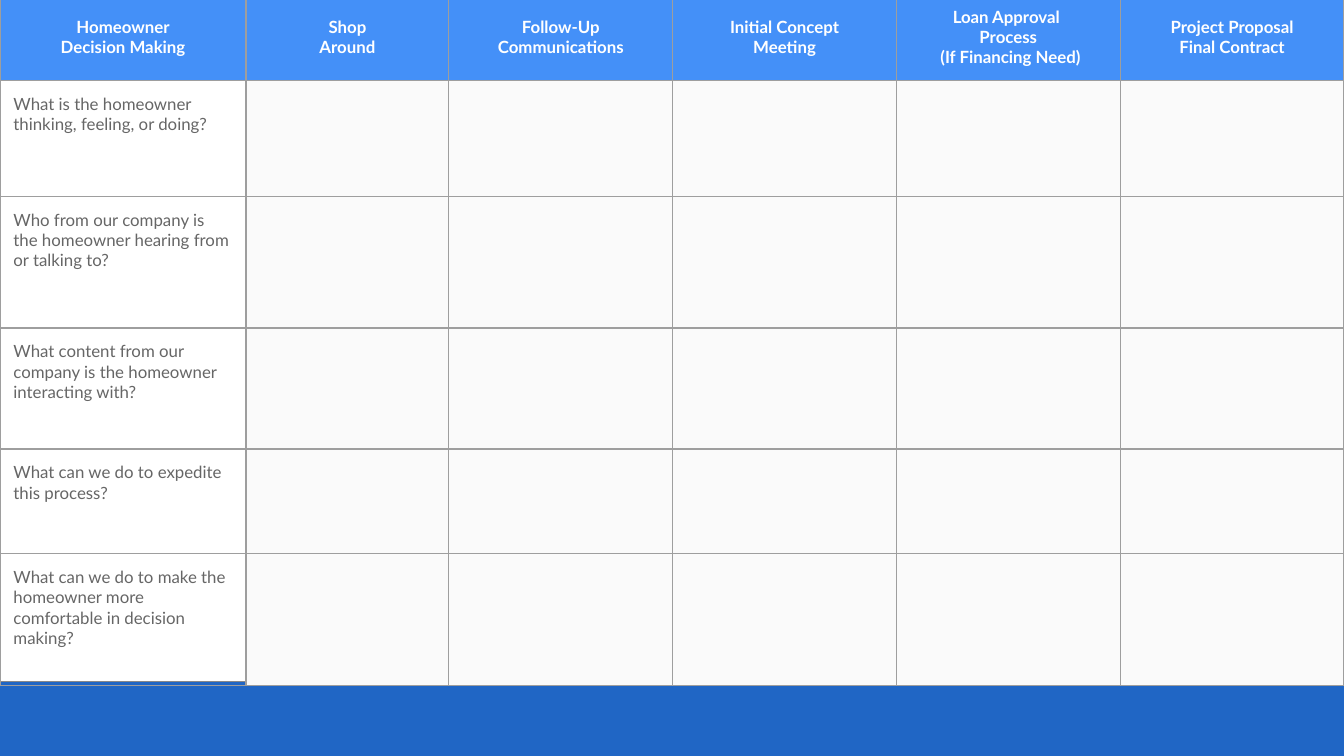
from pptx import Presentation
from pptx.dml.color import RGBColor
from pptx.enum.shapes import MSO_SHAPE as Shape
from pptx.enum.text import MSO_ANCHOR as Anchor, PP_ALIGN as Align
from pptx.oxml import parse_xml
from pptx.oxml.ns import nsdecls
from pptx.util import Inches, Pt

DEEP_BLUE = RGBColor(0x20, 0x66, 0xC5)
HEADER_BLUE = RGBColor(0x44, 0x90, 0xF8)
WHITE = RGBColor(0xFF, 0xFF, 0xFF)
PALE_GRAY = RGBColor(0xFA, 0xFA, 0xFA)
TEXT_GRAY = RGBColor(0x66, 0x66, 0x66)
PANEL_EDGE = RGBColor(0x88, 0x88, 0x88)
GRID_GRAY = RGBColor(0x9E, 0x9E, 0x9E)

SLIDE_WIDTH = 10
SLIDE_HEIGHT = SLIDE_WIDTH * 9 / 16
QUESTION_WIDTH, FIRST_STAGE_WIDTH = 1.83, 1.51
HEADER_HEIGHT = 0.59

STAGES = [
    ["Homeowner", "Decision Making"],
    ["Shop", "Around"],
    ["Follow-Up", "Communications"],
    ["Initial Concept", "Meeting"],
    ["Loan Approval ", "Process", " (If Financing Need)"],
    ["Project Proposal", "Final Contract"],
]
QUESTIONS = [
    (0.86, ["What is the homeowner", "thinking, feeling, or doing?"]),
    (0.98, ["Who from our company is the homeowner hearing from or talking to?"]),
    (0.9, ["What content from our company is the homeowner interacting with?"]),
    (0.78, ["What can we do to expedite this process?"]),
    (0.98, ["What can we do to make the homeowner more comfortable in decision making?"]),
]


def write_text(frame, lines, color, size=9, bold=False, align=Align.LEFT):
    for index, line in enumerate(lines):
        paragraph = frame.paragraphs[0] if index == 0 else frame.add_paragraph()
        paragraph.alignment = align
        run = paragraph.add_run()
        run.text = line
        run.font.name = "Lato"
        run.font.size = Pt(size)
        run.font.bold = bold
        run.font.color.rgb = color


def style_cell(cell, fill=None):
    """Set margins, grid borders and fill; without a fill the panel shows through."""
    cell.margin_left = cell.margin_right = Inches(0.1)
    cell.margin_top = cell.margin_bottom = Inches(0.1)
    properties = cell._tc.get_or_add_tcPr()
    for side in ("lnL", "lnR", "lnT", "lnB"):
        properties.append(parse_xml(
            f'<a:{side} {nsdecls("a")} w="{Pt(0.75)}"><a:solidFill>'
            f'<a:srgbClr val="{GRID_GRAY}"/></a:solidFill></a:{side}>'))
    if fill is None:
        cell.fill.background()
    else:
        cell.fill.solid()
        cell.fill.fore_color.rgb = fill


def add_panel(slide, left, top, width, height):
    panel = slide.shapes.add_shape(
        Shape.RECTANGLE, Inches(left), Inches(top), Inches(width), Inches(height))
    panel.shadow.inherit = False
    panel.fill.solid()
    panel.fill.fore_color.rgb = WHITE
    panel.line.color.rgb = PANEL_EDGE
    panel.line.width = Pt(0.75)


def add_journey_table(slide, left, top, width):
    row_heights = [HEADER_HEIGHT] + [height for height, _ in QUESTIONS]
    later_stages = len(STAGES) - 2
    stage_width = (width - QUESTION_WIDTH - FIRST_STAGE_WIDTH) / later_stages
    column_widths = [QUESTION_WIDTH, FIRST_STAGE_WIDTH] + [stage_width] * later_stages

    table = slide.shapes.add_table(
        len(row_heights), len(column_widths), Inches(left), Inches(top),
        Inches(width), Inches(sum(row_heights))).table
    table.first_row = table.horz_banding = False
    for column, column_width in zip(table.columns, column_widths):
        column.width = Inches(column_width)
    for row, row_height in zip(table.rows, row_heights):
        row.height = Inches(row_height)

    for column, stage in enumerate(STAGES):
        header = table.cell(0, column)
        style_cell(header, HEADER_BLUE)
        header.vertical_anchor = Anchor.MIDDLE
        write_text(header.text_frame, stage, WHITE, bold=True, align=Align.CENTER)

    for row, (_, question) in enumerate(QUESTIONS, start=1):
        style_cell(table.cell(row, 0))
        write_text(table.cell(row, 0).text_frame, question, TEXT_GRAY)
        for column in range(1, len(STAGES)):
            style_cell(table.cell(row, column), PALE_GRAY)


def main():
    deck = Presentation()
    deck.slide_width, deck.slide_height = Inches(SLIDE_WIDTH), Inches(SLIDE_HEIGHT)
    slide = deck.slides.add_slide(deck.slide_layouts[6])
    slide.background.fill.solid()
    slide.background.fill.fore_color.rgb = DEEP_BLUE
    add_panel(slide, 0, 0, SLIDE_WIDTH, 5.07)
    add_journey_table(slide, 0, -0.05, SLIDE_WIDTH)
    deck.save("out.pptx")


if __name__ == "__main__":
    main()
